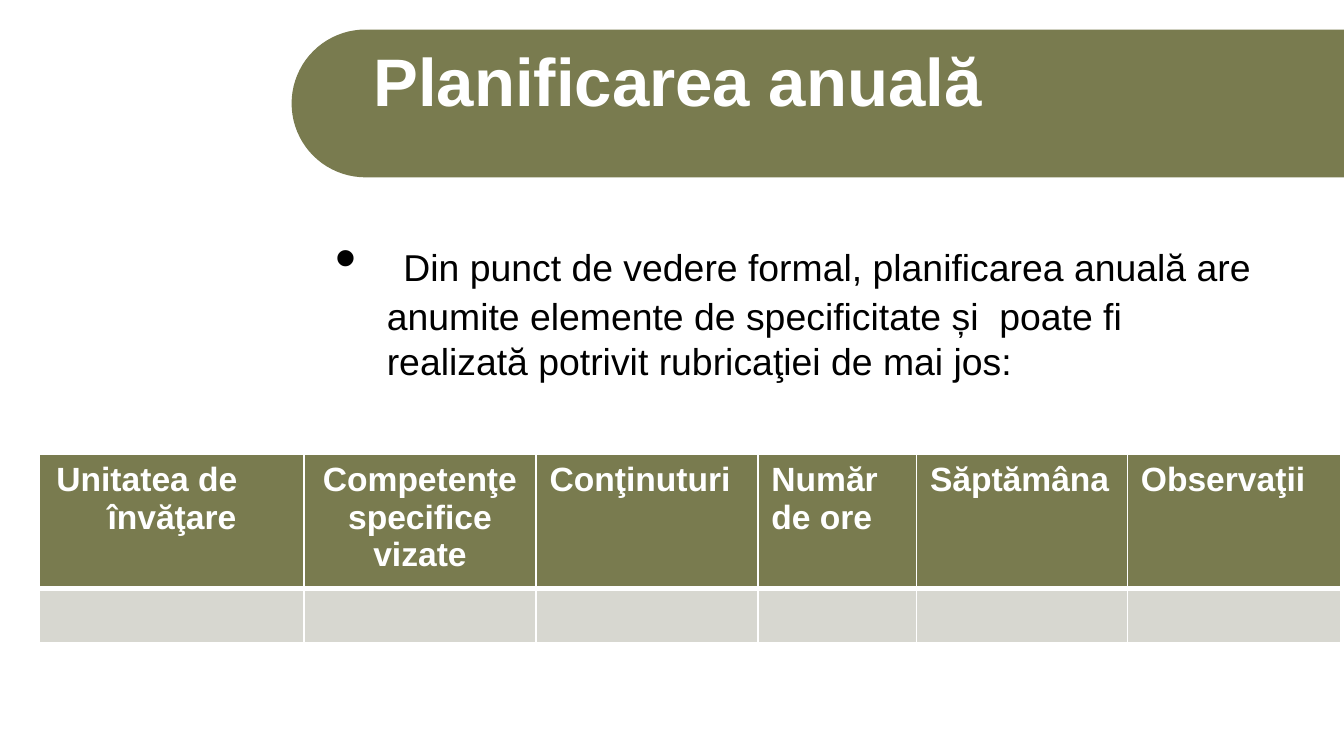
"""Build the annual planning slide with a banner, a bullet and a table."""
from math import cos, pi, sin

from lxml import etree
from pptx import Presentation
from pptx.dml.color import RGBColor
from pptx.enum.text import MSO_ANCHOR, PP_ALIGN
from pptx.oxml.ns import qn
from pptx.util import Inches, Pt

MIDDLE = MSO_ANCHOR.MIDDLE
CENTER, LEFT = PP_ALIGN.CENTER, PP_ALIGN.LEFT
OLIVE, GREY, WHITE, BLACK = "797B4F", "D7D7D0", "FFFFFF", "000000"


def paint(fill, color):
    fill.solid()
    fill.fore_color.rgb = RGBColor.from_string(color)


def add_run(para, text, size, color, bold=False):
    span = para.add_run()
    span.text = text
    span.font.name = "Arial"
    span.font.size = Pt(size)
    span.font.bold = bold
    paint(span.font.fill, color)


deck = Presentation()
deck.slide_width, deck.slide_height = Inches(10), Inches(10 * 9 / 16)
slide = deck.slides.add_slide(deck.slide_layouts[6])

radius, center_x, center_y = 0.55, 2.72, 0.77
steps = 40
arc = [
    (Inches(center_x - radius * sin(pi * step / steps)),
     Inches(center_y + radius * cos(pi * step / steps)))
    for step in range(steps + 1)
]
builder = slide.shapes.build_freeform(Inches(10), Inches(center_y - radius))
builder.add_line_segments([(Inches(10), Inches(center_y + radius))] + arc)
banner = builder.convert_to_shape()
banner.shadow.inherit = False
paint(banner.fill, OLIVE)
banner.line.fill.background()

title = slide.shapes.add_textbox(Inches(2.68), Inches(0.28), Inches(7.32), Inches(0.63))
title.text_frame.word_wrap = True
title.text_frame.vertical_anchor = MIDDLE
add_run(title.text_frame.paragraphs[0], "Planificarea anuală", 36, WHITE, True)

body = slide.shapes.add_textbox(Inches(2.4), Inches(1.6), Inches(7.17), Inches(1.4))
body.text_frame.word_wrap = True
para = body.text_frame.paragraphs[0]
properties = para._p.get_or_add_pPr()
properties.set("marL", str(Inches(0.38)))
properties.set("indent", str(Inches(-0.38)))
etree.SubElement(properties, qn("a:buFont"), typeface="Arial")
etree.SubElement(properties, qn("a:buChar"), char="•")
add_run(para, " ", 32, BLACK)
add_run(para, "Din punct de vedere formal, planificarea anuală are anumite elemente "
        "de specificitate și  poate fi realizată potrivit rubricaţiei de mai jos:",
        20, BLACK)

columns = [
    ("Unitatea de învăţare", 1.97, LEFT),
    ("Competenţe specifice vizate", 1.73, CENTER),
    ("Conţinuturi", 1.65, LEFT),
    ("Număr de ore", 1.18, LEFT),
    ("Săptămâna", 1.57, LEFT),
    ("Observaţii", 1.59, LEFT),
]
row_colors = [OLIVE, GREY]
frame = slide.shapes.add_table(
    len(row_colors), len(columns), Inches(0.29), Inches(3.38), Inches(9.7), Inches(1.4))
table = frame.table
for row in table.rows:
    row.height = Inches(0.38)

for column, (heading, width, alignment) in enumerate(columns):
    table.columns[column].width = Inches(width)
    para = table.cell(0, column).text_frame.paragraphs[0]
    para.alignment = alignment
    add_run(para, heading, 18, WHITE, True)
    for row, color in enumerate(row_colors):
        cell = table.cell(row, column)
        cell_properties = cell._tc.get_or_add_tcPr()
        for side in ["lnL", "lnR", "lnT", "lnB"]:
            thick = (row, side) == (0, "lnB")
            border = etree.SubElement(
                cell_properties, qn(f"a:{side}"), w=str(Pt(3 if thick else 1)))
            fill = etree.SubElement(border, qn("a:solidFill"))
            etree.SubElement(fill, qn("a:srgbClr"), val=WHITE)
        paint(cell.fill, color)
frame.height = Inches(1.4)

hanging = table.cell(0, 0).text_frame.paragraphs[0]._p.get_or_add_pPr()
hanging.set("marL", str(Inches(0.41)))
hanging.set("indent", str(Inches(-0.38)))

deck.save("out.pptx")
